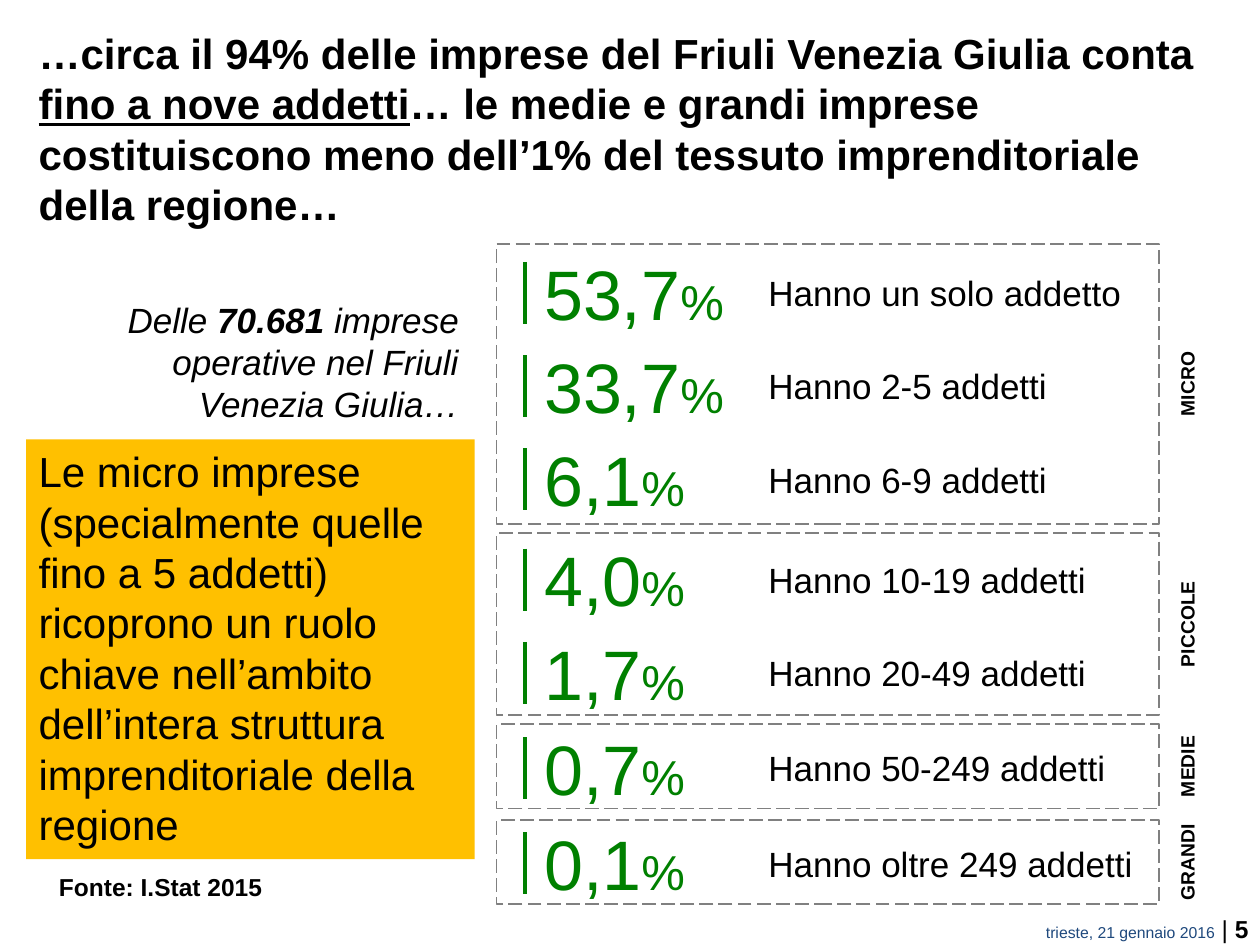
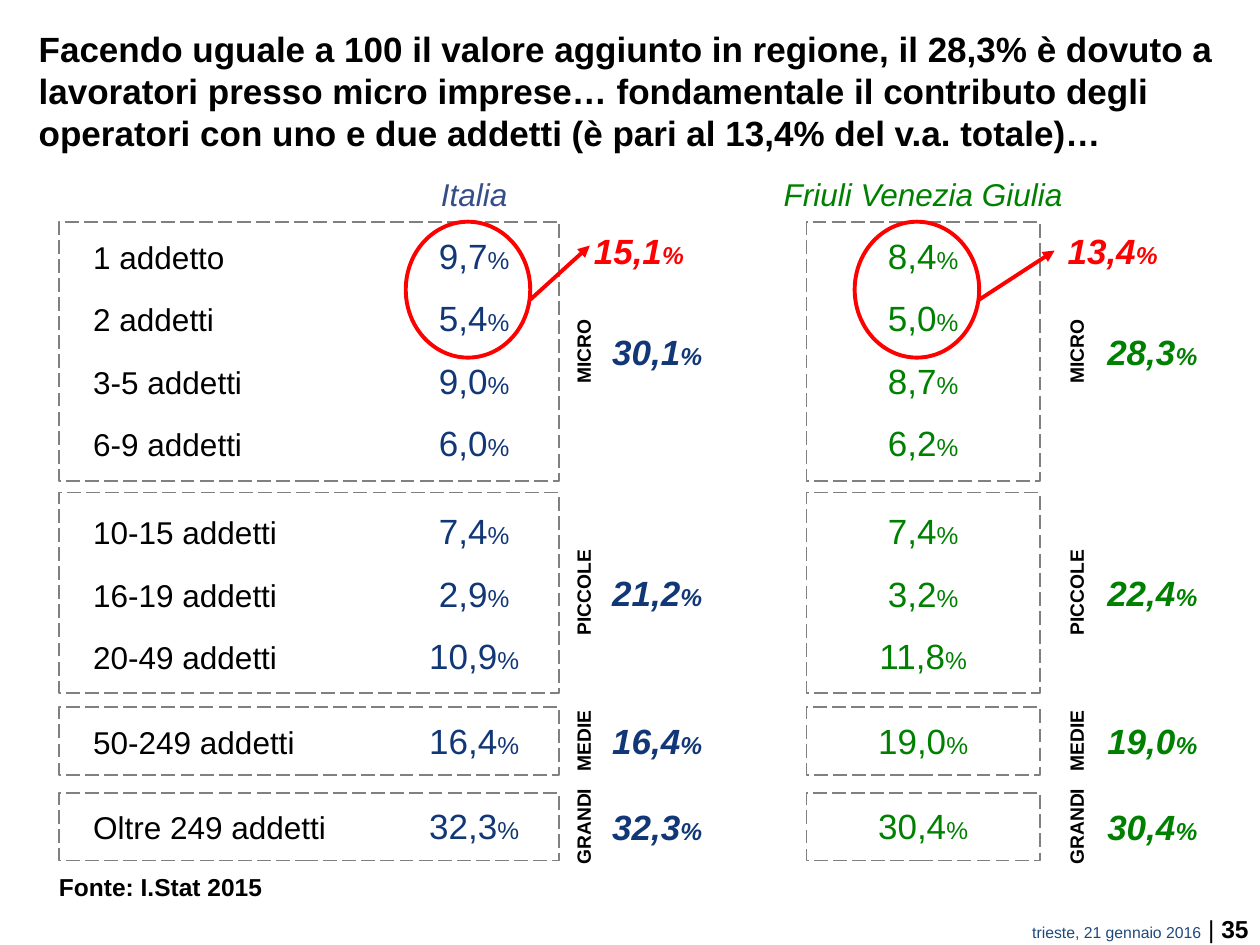
import dataclasses

import lxml.etree
import pptx
import pptx.dml.color
import pptx.enum.dml
import pptx.enum.shapes
import pptx.enum.text
import pptx.oxml.ns
import pptx.util

Cm = pptx.util.Cm
ALIGN = pptx.enum.text.PP_ALIGN
ANCHOR = pptx.enum.text.MSO_ANCHOR
SHAPE = pptx.enum.shapes.MSO_SHAPE


@dataclasses.dataclass(frozen=True)
class Theme:
    font: str = "Arial"
    # colours
    black: str = "000000"
    green: str = "008000"
    navy: str = "113776"
    italy: str = "364E88"
    red: str = "FF0000"
    grey: str = "808080"
    amber: str = "FFC000"
    footer: str = "1F497D"
    # type sizes and line widths in points
    huge: int = 40
    huge_unit: int = 28
    large: int = 24
    body: int = 20
    label: int = 18
    small: int = 14
    tag: int = 11
    tiny: int = 9
    thin: float = 1
    thick: float = 2.25


T = Theme()


@dataclasses.dataclass
class Box:
    """A region in centimetres."""
    left: float
    top: float
    width: float
    height: float

    @property
    def right(self):
        return self.left + self.width

    @property
    def middle(self):
        return self.top + self.height / 2

    def lengths(self):
        return [Cm(v) for v in (self.left, self.top, self.width, self.height)]


def centred(x, y, width, height):
    return Box(x - width / 2, y - height / 2, width, height)


@dataclasses.dataclass
class Band:
    """A size class: its place, its first row and the rows in it."""
    tag: str
    top: float
    height: float
    first_row: float
    rows: list


def rgb(color):
    return pptx.dml.color.RGBColor.from_string(color)


# Basic parts

def write(tf, text, size=T.body, color=T.black, bold=False, italic=False,
          align=ALIGN.LEFT, anchor=ANCHOR.TOP):
    """Write one paragraph; text is a string or a list of (string, changes)."""
    tf.word_wrap = True
    tf.vertical_anchor = anchor
    p = tf.paragraphs[0]
    p.alignment = align
    runs = [(text, {})] if isinstance(text, str) else text
    for words, changes in runs:
        look = dict(size=size, color=color, bold=bold, underline=None) | changes
        r = p.add_run()
        r.text = words
        r.font.name = T.font
        r.font.size = pptx.util.Pt(look["size"])
        r.font.color.rgb = rgb(look["color"])
        r.font.bold = look["bold"]
        r.font.italic = italic
        r.font.underline = look["underline"]


def add_text(s, box, text, rotation=0, **style):
    sp = s.shapes.add_textbox(*box.lengths())
    sp.rotation = rotation
    write(sp.text_frame, text, **style)


def add_percent(s, box, number, unit_size=T.small, **style):
    add_text(s, box, [(number, {}), ("%", {"size": unit_size})], **style)


def add_shape(s, kind, box, fill=None, line=None, width=T.thin, dash=None):
    sp = s.shapes.add_shape(kind, *box.lengths())
    sp.shadow.inherit = False
    if fill:
        sp.fill.solid()
        sp.fill.fore_color.rgb = rgb(fill)
    else:
        sp.fill.background()
    if line:
        sp.line.color.rgb = rgb(line)
        sp.line.width = pptx.util.Pt(width)
        sp.line.dash_style = dash
    else:
        sp.line.fill.background()
    return sp


def add_line(s, x1, y1, x2, y2, color, arrow=False):
    ln = s.shapes.add_connector(pptx.enum.shapes.MSO_CONNECTOR.STRAIGHT,
                                Cm(x1), Cm(y1), Cm(x2), Cm(y2))
    ln.line.color.rgb = rgb(color)
    ln.line.width = pptx.util.Pt(T.thick)
    if arrow:
        lxml.etree.SubElement(ln.line._get_or_add_ln(),
                              pptx.oxml.ns.qn("a:tailEnd"), type="triangle")
    lxml.etree.SubElement(ln._element.spPr, pptx.oxml.ns.qn("a:effectLst"))


# Parts shared by the slides

def add_frame(s, title, size, number):
    """Title, source and footer."""
    add_text(s, Box(0.53, 0.43, 24.3, 2.13), title, size=size, bold=True)
    add_text(s, Box(0.94, 17.45, 8, 0.86), "Fonte: I.Stat 2015",
             size=T.small, bold=True, anchor=ANCHOR.MIDDLE)
    add_text(s, Box(7.82, 18.31, 17.6, 0.84),
             [("trieste, 21 gennaio 2016", {"size": T.tiny, "color": T.footer}),
              (" | ", {}), (number, {"bold": True})],
             size=T.small, align=ALIGN.RIGHT)


def add_bands(s, bands, left, width, tag_gap):
    """Dashed boxes with an upright size tag to the right of each."""
    for band in bands:
        box = Box(left, band.top, width, band.height)
        add_shape(s, SHAPE.RECTANGLE, box, line=T.grey,
                  dash=pptx.enum.dml.MSO_LINE.LONG_DASH)
        add_text(s, centred(box.right + tag_gap, box.middle, 3.33, 0.74),
                 band.tag, rotation=270, size=T.tag, bold=True,
                 align=ALIGN.CENTER)


# Slide with the distribution of firms

def add_share_row(s, box, number, firms):
    """Green bar, large share and description."""
    bar_top = box.top + 0.36
    add_line(s, box.left, bar_top, box.left, bar_top + 1.25, T.green)
    add_percent(s, Box(box.left + 0.13, box.top, 4.6, box.height), number,
                unit_size=T.huge_unit, size=T.huge, color=T.green)
    add_text(s, Box(box.left + 4.65, box.top + 0.43, 9.27, 1.11),
             "Hanno " + firms)


def add_message(s, box):
    """Lead-in and highlighted conclusion."""
    add_text(s, Box(box.left + 0.66, box.top, 8.31, 2.82),
             [("Delle ", {}), ("70.681", {"bold": True}),
              (" imprese operative nel Friuli Venezia Giulia…", {})],
             italic=True, align=ALIGN.RIGHT)
    sp = add_shape(s, SHAPE.RECTANGLE,
                   Box(box.left, box.top + 2.97, box.width, box.height - 2.97),
                   fill=T.amber)
    write(sp.text_frame,
          "Le micro imprese (specialmente quelle fino a 5 addetti) ricoprono "
          "un ruolo chiave nell’ambito dell’intera struttura imprenditoriale "
          "della regione", size=T.large)


def firms_slide(prs):
    s = prs.slides.add_slide(prs.slide_layouts[6])
    add_frame(s, [
        ("…circa il 94% delle imprese del Friuli Venezia Giulia conta ", {}),
        ("fino a nove addetti", {"underline": True}),
        ("… le medie e grandi imprese costituiscono meno dell’1% del tessuto "
         "imprenditoriale della regione…", {})], T.large, "5")
    bands = [
        Band("MICRO", 4.92, 5.64, 4.92, [("53,7", "un solo addetto"),
                                         ("33,7", "2-5 addetti"),
                                         ("6,1", "6-9 addetti")]),
        Band("PICCOLE", 10.75, 3.66, 10.7, [("4,0", "10-19 addetti"),
                                            ("1,7", "20-49 addetti")]),
        Band("MEDIE", 14.6, 1.7, 14.5, [("0,7", "50-249 addetti")]),
        Band("GRANDI", 16.53, 1.7, 16.42, [("0,1", "oltre 249 addetti")]),
    ]
    add_bands(s, bands, left=10.01, width=13.36, tag_gap=0.57)
    row_pitch = 1.88
    for band in bands:
        for i, (number, firms) in enumerate(band.rows):
            row = Box(10.59, band.first_row + i * row_pitch, 13.9, 1.96)
            add_share_row(s, row, number, firms)
    add_message(s, Box(0.53, 5.89, 9.04, 11.43))


# Slide with the value added by size class

@dataclasses.dataclass
class Area:
    """One territory: its column and its figures."""
    name: str
    name_color: str
    color: str
    left: float
    width: float
    tag_gap: float
    value_x: float
    total_x: float
    values: list
    totals: list
    top_two: str
    top_two_x: float
    arrow_end: tuple


VALUE_ROW = 1.26


def row_tops(bands):
    return [band.first_row + i * VALUE_ROW
            for band in bands for i in range(len(band.rows))]


def add_top_two(s, area, top):
    """Ring round the two smallest classes, with an arrow to their sum."""
    ring = Box(area.value_x - 1.38, top, 2.51, 2.74)
    add_shape(s, SHAPE.OVAL, ring, line=T.red, width=T.thick)
    add_line(s, ring.right, ring.middle + 0.2, *area.arrow_end, T.red,
             arrow=True)
    add_percent(s, Box(area.top_two_x - 1.5, top + 0.03, 3, 1.11),
                area.top_two, color=T.red, bold=True, italic=True,
                align=ALIGN.CENTER)


def add_area(s, area, bands):
    """Boxes, heading, values and class totals of one territory."""
    add_bands(s, bands, area.left, area.width, area.tag_gap)
    add_text(s, Box(area.value_x - 3.5, 3.4, 7, 1.02), area.name,
             size=T.label, color=area.name_color, italic=True,
             align=ALIGN.CENTER)
    for top, value in zip(row_tops(bands), area.values):
        add_percent(s, Box(area.value_x - 1.5, top, 3, 1.11), value,
                    color=area.color, align=ALIGN.CENTER)
    for band, total in zip(bands, area.totals):
        add_percent(s, centred(area.total_x, band.top + band.height / 2, 3, 1.11),
                    total, color=area.color, bold=True, italic=True,
                    align=ALIGN.CENTER)
    add_top_two(s, area, bands[0].top)


def value_added_slide(prs):
    s = prs.slides.add_slide(prs.slide_layouts[6])
    add_frame(s, "Facendo uguale a 100 il valore aggiunto in regione, il 28,3% "
                 "è dovuto a lavoratori presso micro imprese… fondamentale il "
                 "contributo degli operatori con uno e due addetti (è pari al "
                 "13,4% del v.a. totale)…", T.body, "35")
    bands = [
        Band("MICRO", 4.47, 5.23, 4.6, ["1 addetto", "2 addetti",
                                        "3-5 addetti", "6-9 addetti"]),
        Band("PICCOLE", 9.93, 4.04, 10.15, ["10-15 addetti", "16-19 addetti",
                                            "20-49 addetti"]),
        Band("MEDIE", 14.25, 1.37, 14.38, ["50-249 addetti"]),
        Band("GRANDI", 15.98, 1.37, 16.1, ["Oltre 249 addetti"]),
    ]
    labels = [label for band in bands for label in band.rows]
    for top, label in zip(row_tops(bands), labels):
        add_text(s, Box(1.63, top + 0.07, 6.05, 1.02), label, size=T.label)
    areas = [
        Area("Italia", T.italy, T.navy, left=1.19, width=10.08, tag_gap=0.5,
             value_x=9.56, total_x=13.25,
             values=["9,7", "5,4", "9,0", "6,0", "7,4", "2,9", "10,9",
                     "16,4", "32,3"],
             totals=["30,1", "21,2", "16,4", "32,3"],
             top_two="15,1", top_two_x=12.88, arrow_end=(11.89, 4.95)),
        Area("Friuli Venezia Giulia", T.green, T.green, left=16.26, width=4.7,
             tag_gap=0.75, value_x=18.61, total_x=23.23,
             values=["8,4", "5,0", "8,7", "6,2", "7,4", "3,2", "11,8",
                     "19,0", "30,4"],
             totals=["28,3", "22,4", "19,0", "30,4"],
             top_two="13,4", top_two_x=22.43, arrow_end=(21.26, 5.05)),
    ]
    for area in areas:
        add_area(s, area, bands)


def main():
    prs = pptx.Presentation()
    prs.slide_width, prs.slide_height = Cm(25.4), Cm(19.05)
    firms_slide(prs)
    value_added_slide(prs)
    prs.save("out.pptx")


if __name__ == "__main__":
    main()
